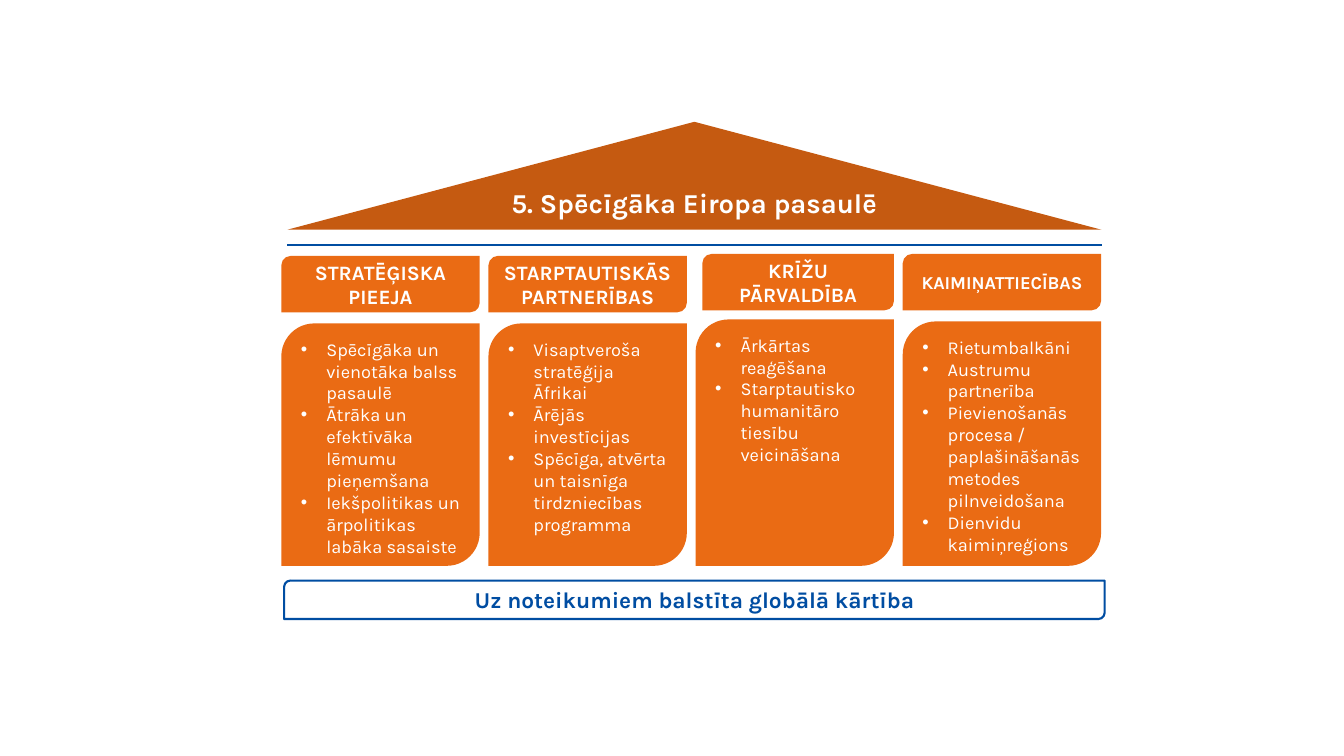
from dataclasses import dataclass

from lxml import etree
from pptx import Presentation
from pptx.dml.color import RGBColor
from pptx.enum.shapes import MSO_CONNECTOR, MSO_SHAPE
from pptx.enum.text import MSO_ANCHOR, MSO_AUTO_SIZE, PP_ALIGN
from pptx.oxml.ns import qn
from pptx.util import Cm, Pt

ROOF = MSO_SHAPE.ISOSCELES_TRIANGLE
CARD = MSO_SHAPE.ROUND_2_DIAG_RECTANGLE
LINE = MSO_CONNECTOR.STRAIGHT
TOP, MIDDLE = MSO_ANCHOR.TOP, MSO_ANCHOR.MIDDLE
LEFT, CENTER = PP_ALIGN.LEFT, PP_ALIGN.CENTER
NO_FIT = MSO_AUTO_SIZE.NONE


@dataclass(frozen=True)
class Theme:
    font: str = "Karla"
    white: RGBColor = RGBColor(0xFF, 0xFF, 0xFF)
    orange: RGBColor = RGBColor(0xEA, 0x6B, 0x14)
    brown: RGBColor = RGBColor(0xC5, 0x5A, 0x11)
    blue: RGBColor = RGBColor(0x00, 0x4D, 0xA2)
    title: float = 19.5
    base: float = 16.2
    head: float = 14.6
    small: float = 13
    stroke: float = 1.5


THEME = Theme()

# Columns, in cm: left edge, step, width and common bottom edge
START, STEP, WIDTH, FLOOR = 7.09, 5.22, 5.0, 14.26
HEAD_H = 1.42
INSET = 0.24  # keeps list text clear of the rounded corners

# Heading, heading size, heading width, heading top, card top, list items
PILLARS = [
    ("STRATĒĢISKA PIEEJA", THEME.head, 5.0, 6.45, 8.15, [
        "Spēcīgāka un vienotāka balss pasaulē",
        "Ātrāka un efektīvāka lēmumu pieņemšana",
        "Iekšpolitikas un ārpolitikas labāka sasaiste"]),
    ("STARPTAUTISKĀS PARTNERĪBAS", THEME.head, 5.0, 6.45, 8.15, [
        "Visaptveroša stratēģija Āfrikai",
        "Ārējās investīcijas",
        "Spēcīga, atvērta un taisnīga tirdzniecības programma"]),
    ("KRĪŽU PĀRVALDĪBA", THEME.head, 4.83, 6.4, 8.05, [
        "Ārkārtas reaģēšana",
        "Starptautisko humanitāro tiesību veicināšana"]),
    ("KAIMIŅATTIECĪBAS", THEME.small, 5.0, 6.4, 8.1, [
        "Rietumbalkāni",
        "Austrumu partnerība",
        "Pievienošanās procesa / paplašināšanās metodes pilnveidošana",
        "Dienvidu kaimiņreģions"]),
]


def add_run(para, text, size, color, bold):
    run = para.add_run()
    run.text = text
    font = run.font
    font.name, font.size, font.bold = THEME.font, Pt(size), bold
    font.color.rgb = color


def set_frame(shape, anchor):
    frame = shape.text_frame
    frame.word_wrap = True
    frame.auto_size = NO_FIT
    frame.vertical_anchor = anchor
    return frame


def add_label(shape, text, size, color):
    para = set_frame(shape, MIDDLE).paragraphs[0]
    para.alignment = CENTER
    add_run(para, text, size, color, True)


def add_block(slide, kind, box, fill=None, line=None):
    shape = slide.shapes.add_shape(kind, *map(Cm, box))
    shape.shadow.inherit = False
    if fill is None:
        shape.fill.background()
    else:
        shape.fill.solid()
        shape.fill.fore_color.rgb = fill
    if line is None:
        shape.line.fill.background()
    else:
        shape.line.color.rgb = line
        shape.line.width = Pt(THEME.stroke)
    return shape


def add_rule(slide, left, right, top):
    rule = slide.shapes.add_connector(LINE, Cm(left), Cm(top), Cm(right), Cm(top))
    rule.line.color.rgb = THEME.blue
    rule.line.width = Pt(THEME.stroke)
    etree.SubElement(rule.element.spPr, qn("a:effectLst"))


def place(slide, holder, box):
    """Move a placeholder to its box and in front of the shapes drawn so far."""
    holder.left, holder.top, holder.width, holder.height = map(Cm, box)
    slide.shapes.element.append(holder.element)


def add_bullet(para):
    props = para._p.get_or_add_pPr()
    props.set("marL", str(Cm(0.64)))
    props.set("indent", str(Cm(-0.64)))
    etree.SubElement(props, qn("a:buFont"), typeface="Arial")
    etree.SubElement(props, qn("a:buChar"), char="•")


def fill_list(holder, items):
    frame = set_frame(holder, TOP)
    for index, item in enumerate(items):
        para = frame.add_paragraph() if index else frame.paragraphs[0]
        para.alignment = LEFT
        para.line_spacing = 1.0
        para.space_before = para.space_after = Pt(0)
        add_bullet(para)
        add_run(para, item, THEME.small, THEME.white, False)


def add_pillar(slide, index, holder, pillar):
    text, size, width, head_top, top, items = pillar
    left = START + index * STEP
    # Heading, flush with the right edge of its card
    box = (left + WIDTH - width, head_top, width, HEAD_H)
    head = add_block(slide, CARD, box, THEME.orange)
    add_label(head, text, size, THEME.white)
    # Card with its list
    high = FLOOR - top
    add_block(slide, CARD, (left, top, WIDTH, high), THEME.orange)
    place(slide, holder, (left + INSET, top + INSET,
                          WIDTH - 2 * INSET, high - 2 * INSET))
    fill_list(holder, items)


def main():
    deck = Presentation()
    deck.slide_width, deck.slide_height = Cm(33.87), Cm(19.05)
    # The comparison layout holds a title and four text bodies
    slide = deck.slides.add_slide(deck.slide_layouts.get_by_name("Comparison"))
    title, *bodies = list(slide.placeholders)

    # Roof and title
    add_block(slide, ROOF, (7.24, 3.07, 20.52, 2.72), THEME.brown)
    place(slide, title, (12.37, 4.43, 10.26, 1.36))
    add_label(title, "5. Spēcīgāka Eiropa pasaulē", THEME.title, THEME.white)
    add_rule(slide, 7.24, 27.76, 6.17)

    # Pillars
    for index, (holder, pillar) in enumerate(zip(bodies, PILLARS)):
        add_pillar(slide, index, holder, pillar)

    # Base
    base = add_block(slide, CARD, (7.16, 14.63, 20.68, 0.97), line=THEME.blue)
    add_label(base, "Uz noteikumiem balstīta globālā kārtība", THEME.base, THEME.blue)

    deck.save("out.pptx")


if __name__ == "__main__":
    main()
